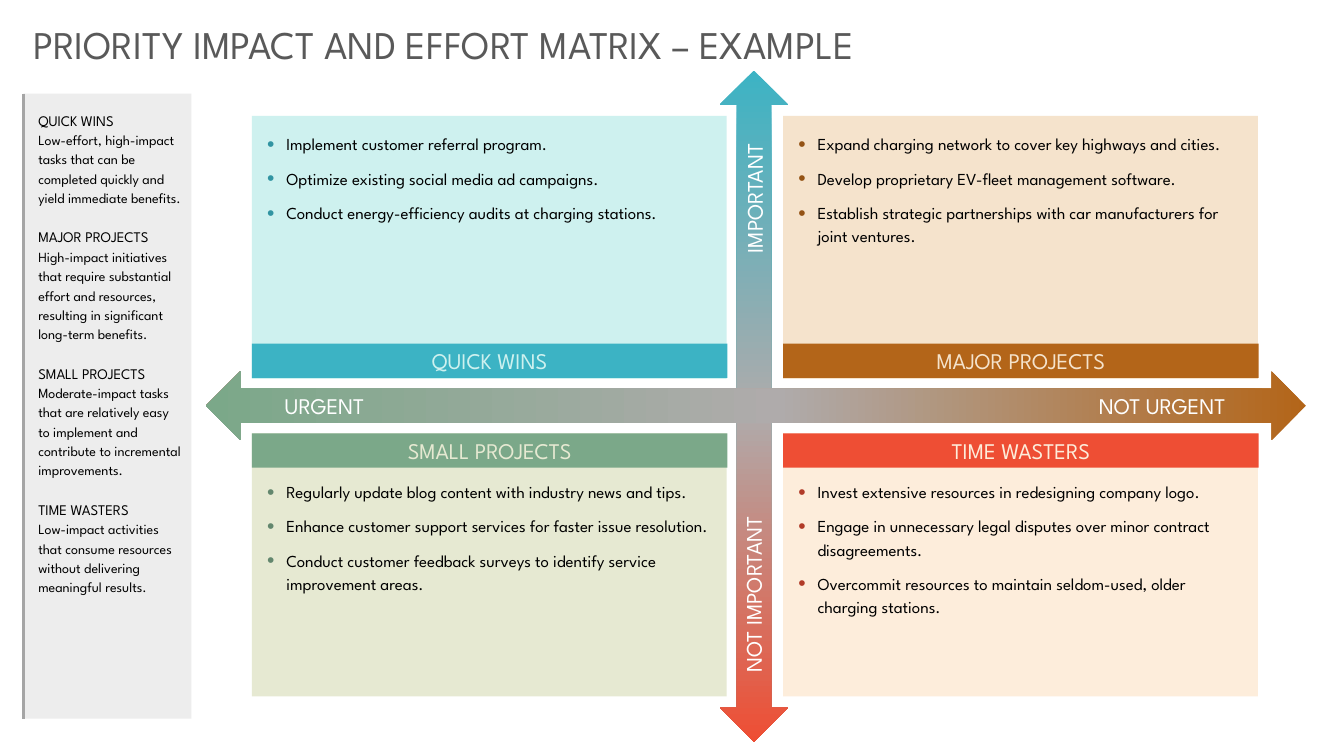
from copy import deepcopy
from lxml import etree
from pptx import Presentation
from pptx import util as u
from pptx.dml.color import RGBColor
from pptx.enum import shapes, text
from pptx.oxml.ns import qn

COLORS = {
    "black": "000000", "white": "FFFFFF", "title": "595959", "panel": "EDEDED",
    "rule": "A5A5A5", "middle": "AFABAB",
    "quick": "3CB3C4", "quick_pale": "CEF1EF", "quick_dark": "3194A2",
    "major": "B36519", "major_pale": "F5E3CC", "major_dark": "945315",
    "small": "7BA889", "small_pale": "E6E9D2", "small_dark": "63876E",
    "waste": "EE4E34", "waste_pale": "FDEDDB", "waste_dark": "B13B28",
}
FONT = "League Spartan"
CENTERED = {"alignment": text.PP_ALIGN.CENTER}
LISTED = {"line_spacing": 1.15, "space_after": u.Pt(8)}
LABEL_INSETS = (0, 0, 0, 0)

deck = Presentation()
deck.slide_width, deck.slide_height = u.Pt(960), u.Pt(540)
page = deck.slides.add_slide(deck.slide_layouts[6])


def add_box(place, fill=None, insets=(7.2, 3.6, 7.2, 3.6), middle=False,
            kind=shapes.MSO_SHAPE.RECTANGLE):
    left, top, width, height = (u.Pt(length) for length in place)
    if fill:
        box = page.shapes.add_shape(kind, left, top, width, height)
        box.shadow.inherit = False
        box.fill.solid()
        box.fill.fore_color.rgb = RGBColor.from_string(COLORS[fill])
        box.line.fill.background()
    else:
        box = page.shapes.add_textbox(left, top, width, height)
    frame = box.text_frame
    frame.word_wrap = True
    frame.vertical_anchor = text.MSO_ANCHOR.MIDDLE if middle else text.MSO_ANCHOR.TOP
    for side, inset in zip(("left", "top", "right", "bottom"), insets):
        setattr(frame, f"margin_{side}", u.Pt(inset))
    return box


def add_para(box, words, size, color, layout):
    frame = box.text_frame
    para = frame.add_paragraph() if frame.text else frame.paragraphs[0]
    for name, value in {"alignment": text.PP_ALIGN.LEFT, **layout}.items():
        setattr(para, name, value)
    span = para.add_run()
    span.text = words
    for name, value in {"name": FONT, "size": u.Pt(size)}.items():
        setattr(span.font, name, value)
    span.font.color.rgb = RGBColor.from_string(COLORS[color])
    return para


title = add_box((16.56, 10.8, 748, 41))
add_para(title, "PRIORITY IMPACT AND EFFORT MATRIX – EXAMPLE", 28, "title", {})

definitions = [
    ("QUICK WINS", "Low-effort, high-impact tasks that can be completed quickly "
     "and yield immediate benefits."),
    ("MAJOR PROJECTS", "High-impact initiatives that require substantial effort and "
     "resources, resulting in significant long-term benefits."),
    ("SMALL PROJECTS", "Moderate-impact tasks that are relatively easy to implement "
     "and contribute to incremental improvements."),
    ("TIME WASTERS", "Low-impact activities that consume resources without "
     "delivering meaningful results."),
]
sidebar = add_box((16.56, 66.96, 120.24, 446.4), "panel", (10.8, 10.8, 7.2, 3.6))
for index, (heading, meaning) in enumerate(definitions):
    gap = u.Pt(13.8 if index else 0)
    add_para(sidebar, heading, 10.5, "black", {"line_spacing": 1.15, "space_before": gap})
    add_para(sidebar, meaning, 10, "black", {"line_spacing": 1.15})

axes = [
    ((514.08, 50.4, 48.96, 479.52), 0, [(0, "quick"), (0.51, "middle"), (1, "waste")]),
    ((515.52, -102.96, 48.96, 785.52), 90, [(0, "major"), (0.48, "middle"), (1, "small")]),
]
for place, turn, stops in axes:
    arrow = add_box(place, "middle", kind=shapes.MSO_SHAPE.UP_DOWN_ARROW)
    arrow.rotation = turn
    arrow.adjustments[0], arrow.adjustments[1] = 0.463, 0.5
    arrow.fill.gradient()
    arrow.fill.gradient_angle = 270
    stop_list = arrow._element.spPr.find(".//" + qn("a:gsLst"))
    stop_list.append(deepcopy(stop_list[0]))
    for stop, (position, color) in zip(arrow.fill.gradient_stops, stops):
        stop.position = position
        stop.color.rgb = RGBColor.from_string(COLORS[color])

axis_labels = [
    ("URGENT", (174.24, 278.64, 115.2, 21.6), 0),
    ("NOT URGENT", (761.76, 278.64, 136.8, 21.6), 0),
    ("NOT IMPORTANT", (460.08, 414, 155.52, 21.6), 270),
    ("IMPORTANT", (473.76, 131.04, 129.6, 21.6), 270),
]
for words, place, turn in axis_labels:
    label = add_box(place, insets=LABEL_INSETS, middle=True)
    label.rotation = turn
    add_para(label, words, 16, "white", CENTERED)

quadrants = [
    ("QUICK WINS", "quick", [
        "Implement customer referral program.",
        "Optimize existing social media ad campaigns.",
        "Conduct energy-efficiency audits at charging stations."]),
    ("MAJOR PROJECTS", "major", [
        "Expand charging network to cover key highways and cities.",
        "Develop proprietary EV-fleet management software.",
        "Establish strategic partnerships with car manufacturers for joint ventures."]),
    ("SMALL PROJECTS", "small", [
        "Regularly update blog content with industry news and tips.",
        "Enhance customer support services for faster issue resolution.",
        "Conduct customer feedback surveys to identify service improvement areas."]),
    ("TIME WASTERS", "waste", [
        "Invest extensive resources in redesigning company logo.",
        "Engage in unnecessary legal disputes over minor contract disagreements.",
        "Overcommit resources to maintain seldom-used, older charging stations."]),
]
for index, (heading, hue, tasks) in enumerate(quadrants):
    row, column = divmod(index, 2)
    left = 180 + column * 379.44
    top = 82.8 + row * 226.8
    banner_top = top if row else 245.52
    inset_top = 32.4 if row else 10.8
    area = add_box((left, top, 339.12, 187.92), f"{hue}_pale", (10.8, inset_top, 7.2, 3.6))
    for task in tasks:
        para = add_para(area, task, 12, "black", LISTED)
        props = para._p.get_or_add_pPr()
        props.set("marL", str(u.Pt(13.68)))
        props.set("indent", str(-u.Pt(13.68)))
        bullet_color = etree.SubElement(props, qn("a:buClr"))
        etree.SubElement(bullet_color, qn("a:srgbClr"), val=COLORS[f"{hue}_dark"])
        etree.SubElement(props, qn("a:buSzPct"), val="125000")
        etree.SubElement(props, qn("a:buFont"), typeface="Arial")
        etree.SubElement(props, qn("a:buChar"), char="•")
    banner = add_box((left, banner_top, 339.6, 24.48), hue, LABEL_INSETS, True)
    add_para(banner, heading, 16, f"{hue}_pale", CENTERED)

rule = page.shapes.add_connector(
    shapes.MSO_CONNECTOR.STRAIGHT, u.Pt(16.56), u.Pt(66.96), u.Pt(16.56), u.Pt(513.36))
rule.line.color.rgb = RGBColor.from_string(COLORS["rule"])
rule.line.width = u.Pt(2)
etree.SubElement(rule._element.spPr, qn("a:effectLst"))

deck.save("out.pptx")
